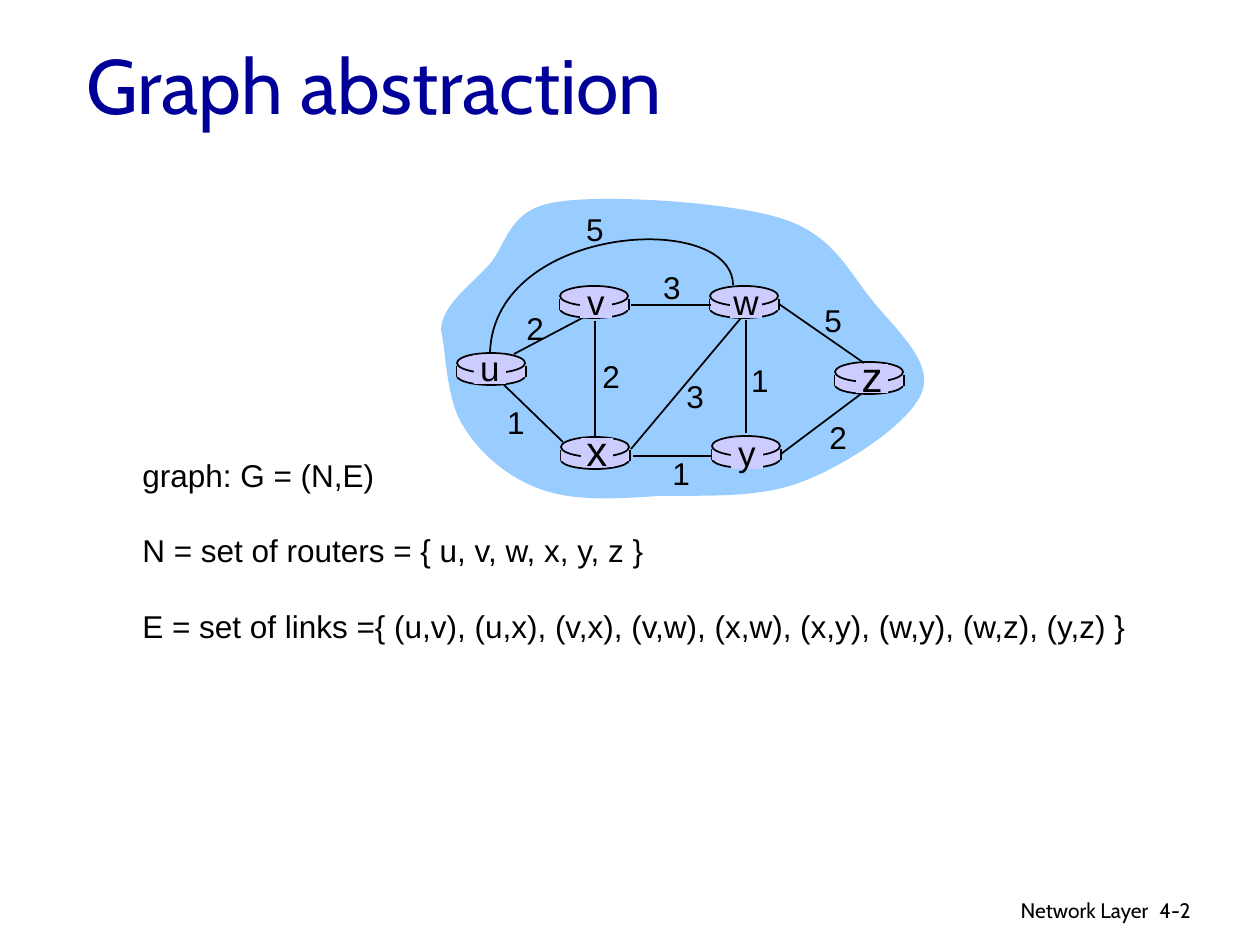
import pptx
import pptx.util
import pptx.dml.color
import pptx.enum.shapes
import pptx.enum.text
import lxml.etree

SCALE = 914400 / 126
COLORS = {"title": "000099", "ink": "000000", "cloud": "99CCFF", "router": "CCCCFF"}
DRAWING = "{http://schemas.openxmlformats.org/drawingml/2006/main}"
SHAPE = pptx.enum.shapes.MSO_SHAPE
ALIGN = pptx.enum.text.PP_ALIGN
ANCHOR = pptx.enum.text.MSO_ANCHOR
FIT = pptx.enum.text.MSO_AUTO_SIZE.SHAPE_TO_FIT_TEXT

CLOUD = [
    (0, 136), (1, 111), (29, 92), (48, 71), (67, 49), (67, 15), (116, 8),
    (164, 0), (287, 8), (339, 24), (392, 40), (407, 77), (431, 106),
    (454, 135), (493, 168), (481, 198), (470, 228), (407, 270), (363, 287),
    (319, 305), (261, 301), (217, 302), (174, 305), (134, 307), (102, 296),
    (69, 285), (39, 260), (23, 233), (5, 207), (5, 156), (0, 136),
]
ARC = [(292, 91), (291, 16), (54, 30), (49, 158)]
LINKS = [
    (73, 160, 149, 120), (305, 126, 305, 239), (154, 127, 154, 244),
    (190, 255, 300, 124), (340, 260, 420, 200), (271, 262, 192, 262),
    (122, 248, 62, 190), (270, 111, 190, 111), (423, 169, 338, 110),
]
COSTS = [
    ("2", 94, 134), ("2", 170, 182), ("1", 75, 228), ("3", 254, 202), ("1", 240, 279),
    ("1", 319, 186), ("2", 397, 243), ("5", 392, 126), ("3", 231, 93), ("5", 154, 35),
]
ROUTERS = [
    ("u", 16, 159, 20, 45, 17, 2),
    ("x", 120, 243, 24, 47, 20, 1),
    ("v", 119, 92, 20, 43, 20, 3),
    ("w", 269, 92, 20, 50, 20, 3),
    ("y", 271, 242, 20, 43, 19, 4),
    ("z", 394, 168, 24, 47, 21, 2),
]
DEFINITIONS = [
    "graph: G = (N,E)",
    "N = set of routers = { u, v, w, x, y, z }",
    "E = set of links ={ (u,v), (u,x), (v,x), (v,w), (x,w), (x,y), (w,y), (w,z), (y,z) }",
]


def emu(px):
    return pptx.util.Emu(round(px * SCALE))


def rgb(name):
    return pptx.dml.color.RGBColor.from_string(COLORS[name])


def style_line(item):
    item.line.color.rgb = rgb("ink")
    item.line.width = pptx.util.Pt(1)


def style_shape(shape, fill=None, outlined=False):
    shape.shadow.inherit = False
    if fill:
        shape.fill.solid()
        shape.fill.fore_color.rgb = rgb(fill)
    else:
        shape.fill.background()
    if outlined:
        style_line(shape)
    else:
        shape.line.fill.background()


def add_text(page, box, lines, size, font="Arial", color="ink", align=ALIGN.LEFT,
             anchor=ANCHOR.TOP, wrap=True, gap=0):
    frame = page.shapes.add_textbox(*map(emu, box)).text_frame
    frame.word_wrap = wrap
    if not wrap:
        frame.auto_size = FIT
    frame.vertical_anchor = anchor
    frame.text = "\n".join(lines)
    for para in frame.paragraphs:
        para.alignment = align
        para.space_after = pptx.util.Pt(gap)
        for span in para.runs:
            span.font.name = font
            span.font.size = pptx.util.Pt(size)
            span.font.color.rgb = rgb(color)


def add_label(page, text, center_x, center_y, size, width=43):
    height = round(2.2 * size + 10)
    box = (center_x - width / 2, center_y - height / 2, width, height)
    add_text(page, box, [text], size, align=ALIGN.CENTER, anchor=ANCHOR.MIDDLE, wrap=False)


def add_line(page, x1, y1, x2, y2):
    line = page.shapes.add_connector(
        pptx.enum.shapes.MSO_CONNECTOR.STRAIGHT, *map(emu, (x1, y1, x2, y2)))
    style_line(line)
    lxml.etree.SubElement(line._element.spPr, DRAWING + "effectLst")


def add_part(page, kind, box, outlined=False):
    shape = page.shapes.add_shape(kind, *map(emu, box))
    style_shape(shape, "router", outlined)


def add_curve(page, left, top, controls, closed):
    vertices = [(emu(left + x), emu(top + y)) for x, y in controls]
    builder = page.shapes.build_freeform(*vertices[0])
    builder.add_line_segments(vertices[1:], close=closed)
    shape = builder.convert_to_shape()
    segments = list(shape._element.iter(DRAWING + "lnTo"))
    for start in range(0, len(segments), 3):
        curve = lxml.etree.Element(DRAWING + "cubicBezTo")
        segments[start].addprevious(curve)
        for segment in segments[start:start + 3]:
            curve.append(segment[0])
            segment.getparent().remove(segment)
    return shape


def add_router(page, left, top):
    add_part(page, SHAPE.OVAL, (left, top + 14, 68, 18), outlined=True)
    for x in (left, left + 69):
        add_line(page, x, top + 13, x, top + 24)
    add_part(page, SHAPE.RECTANGLE, (left, top + 13, 68, 11))
    add_part(page, SHAPE.OVAL, (left, top, 68, 20), outlined=True)


def add_graph(page, box):
    left, top = box[:2]
    style_shape(add_curve(page, left, top, CLOUD, closed=True), "cloud")
    links = [(left + x1, top + y1, left + x2, top + y2) for x1, y1, x2, y2 in LINKS]
    add_line(page, *links[0])
    for _, x, y, *_ in ROUTERS:
        add_router(page, left + x, top + y)
    for link in links[1:]:
        add_line(page, *link)
    style_shape(add_curve(page, left, top, ARC, closed=False), outlined=True)
    for name, x, y, size, width, patch_x, patch_y in ROUTERS:
        patch_left, patch_top = left + x + patch_x, top + y + patch_y
        add_part(page, SHAPE.RECTANGLE, (patch_left, patch_top, 32, 29))
        add_label(page, name, patch_left + 16, patch_top + 12, size, width)
    for cost, x, y in COSTS:
        add_label(page, cost, left + x, top + y, 18)


def add_title(page, box):
    add_text(page, box, ["Graph abstraction"], 44, "Cabin", "title", anchor=ANCHOR.MIDDLE)


def add_definitions(page, box):
    add_text(page, box, DEFINITIONS, 18, wrap=False, gap=21.4)


def add_footer(page, box):
    left, top, width, height = box
    add_text(page, (left, top, 399, height), ["Network Layer"], 12, "Cabin", align=ALIGN.RIGHT)
    add_text(page, (left + 385, top, width - 385, height), ["4-2"], 12, "Cabin")


def main():
    deck = pptx.Presentation()
    deck.slide_width, deck.slide_height = emu(1260), emu(945)
    page = deck.slides.add_slide(deck.slide_layouts[6])
    add_footer(page, (762, 891, 478, 38))
    add_graph(page, (441, 194, 493, 309))
    add_definitions(page, (130, 450, 1019, 202))
    add_title(page, (74, 29, 1071, 110))
    deck.save("out.pptx")


if __name__ == "__main__":
    main()
